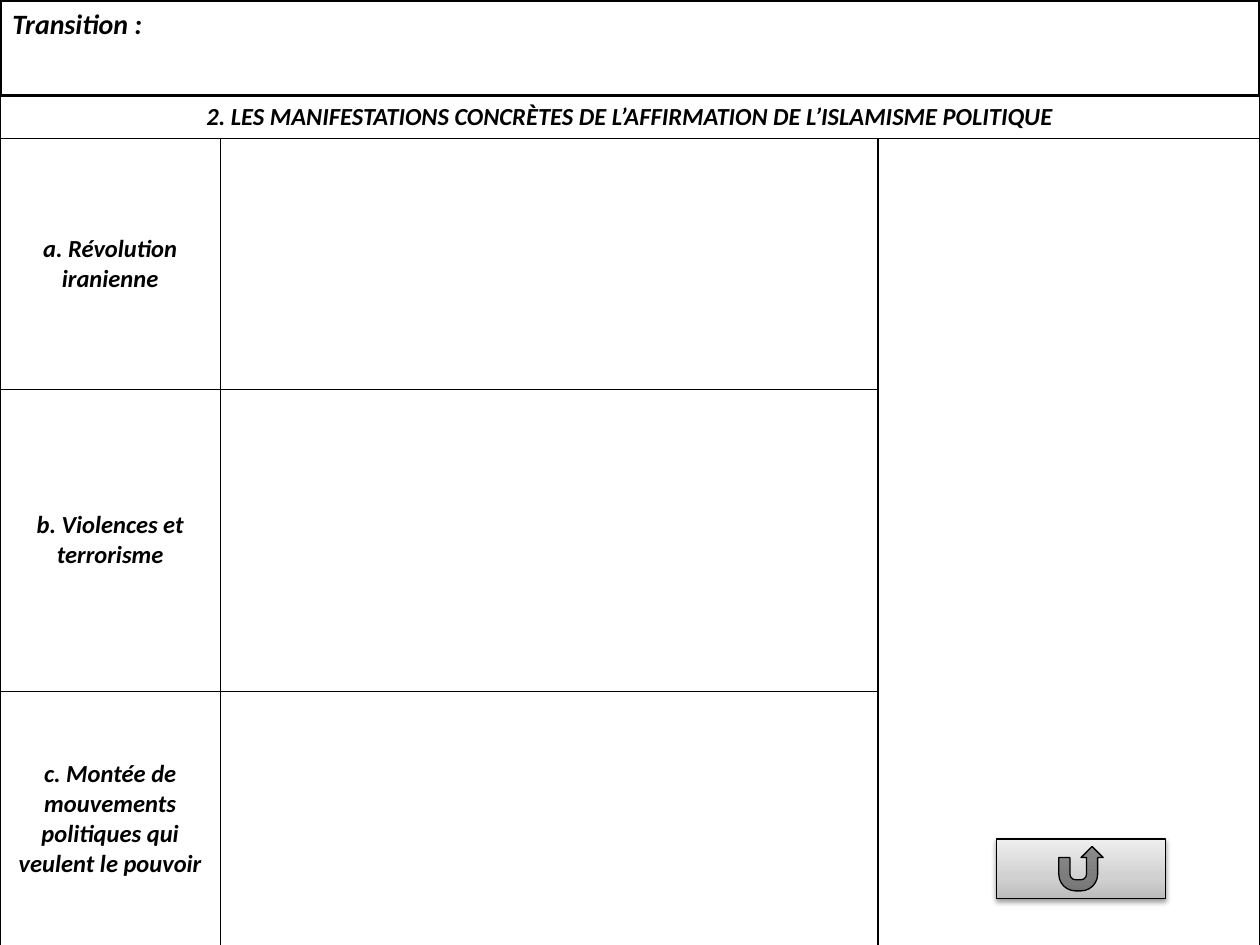
import pptx
import pptx.dml.color
import pptx.enum.shapes
import pptx.enum.text
import pptx.oxml
import pptx.oxml.ns
import pptx.util

Inches = pptx.util.Inches
Pt = pptx.util.Pt
RGBColor = pptx.dml.color.RGBColor
MSO_SHAPE = pptx.enum.shapes.MSO_SHAPE
MSO_ANCHOR = pptx.enum.text.MSO_ANCHOR
PP_ALIGN = pptx.enum.text.PP_ALIGN

BLACK = RGBColor(0x00, 0x00, 0x00)
WHITE = RGBColor(0xFF, 0xFF, 0xFF)
BUTTON_STOPS = {
    0: RGBColor(0xBD, 0xBD, 0xBD),
    35: RGBColor(0xD1, 0xD1, 0xD1),
    100: RGBColor(0xEE, 0xEE, 0xEE),
}
TEXT_FORMAT = {"name": "Calibri", "bold": True, "italic": True}
NAMESPACE = pptx.oxml.ns.nsdecls("a")

COLUMN_WIDTHS = [1.75, 5.22, 3.03]
ROW_HEIGHTS = [0.34, 1.99, 2.4, 2.02]
HEADING = "2. LES MANIFESTATIONS CONCRÈTES DE L’AFFIRMATION DE L’ISLAMISME POLITIQUE"
ROW_LABELS = [
    "a. Révolution iranienne",
    "b. Violences et terrorisme",
    "c. Montée de mouvements politiques qui veulent le pouvoir",
]
BANNER_HEIGHT = 0.76


def write_text(text_frame, text, size, alignment):
    paragraph = text_frame.paragraphs[0]
    paragraph.alignment = alignment
    run = paragraph.add_run()
    run.text = text
    for name, value in TEXT_FORMAT.items():
        setattr(run.font, name, value)
    run.font.size = Pt(size)
    run.font.color.rgb = BLACK


def add_borders(cell):
    properties = cell._tc.get_or_add_tcPr()
    for position, side in enumerate(("lnL", "lnR", "lnT", "lnB")):
        border = pptx.oxml.parse_xml(
            f'<a:{side} {NAMESPACE} w="{Pt(1)}"><a:solidFill>'
            f'<a:srgbClr val="{BLACK}"/></a:solidFill></a:{side}>'
        )
        properties.insert(position, border)


presentation = pptx.Presentation()
presentation.slide_width = Inches(10)
presentation.slide_height = Inches(7.5)
slide = presentation.slides.add_slide(presentation.slide_layouts[6])

# Table grid
table = slide.shapes.add_table(
    len(ROW_HEIGHTS), len(COLUMN_WIDTHS),
    Inches(0), Inches(BANNER_HEIGHT),
    Inches(sum(COLUMN_WIDTHS)), Inches(sum(ROW_HEIGHTS)),
).table
table.first_row = False
table.horz_banding = False
for column, width in zip(table.columns, COLUMN_WIDTHS):
    column.width = Inches(width)
for row, height in zip(table.rows, ROW_HEIGHTS):
    row.height = Inches(height)
    for cell in row.cells:
        cell.fill.background()
        add_borders(cell)
table.cell(0, 0).merge(table.cell(0, 2))
table.cell(1, 2).merge(table.cell(3, 2))

# Heading and row labels
write_text(table.cell(0, 0).text_frame, HEADING, 14, PP_ALIGN.CENTER)
for row_index, label in enumerate(ROW_LABELS, start=1):
    cell = table.cell(row_index, 0)
    cell.vertical_anchor = MSO_ANCHOR.MIDDLE
    write_text(cell.text_frame, label, 14, PP_ALIGN.CENTER)

# Transition banner
banner = slide.shapes.add_shape(
    MSO_SHAPE.RECTANGLE, Inches(0), Inches(0), Inches(10), Inches(BANNER_HEIGHT)
)
banner.shadow.inherit = False
banner.fill.solid()
banner.fill.fore_color.rgb = WHITE
banner.line.color.rgb = BLACK
banner.line.width = Pt(2)

transition = slide.shapes.add_textbox(Inches(0), Inches(0), Inches(1.75), Inches(0.37))
transition.text_frame.word_wrap = True
transition.text_frame.auto_size = pptx.enum.text.MSO_AUTO_SIZE.SHAPE_TO_FIT_TEXT
write_text(transition.text_frame, "Transition :", 16, PP_ALIGN.LEFT)

# Return button with a gradient and a soft shadow
button = slide.shapes.add_shape(
    MSO_SHAPE.ACTION_BUTTON_RETURN, Inches(7.91), Inches(6.66), Inches(1.34), Inches(0.47)
)
button.line.color.rgb = BLACK
button.line.width = Pt(0.75)
stops = "".join(
    f'<a:gs pos="{position * 1000}"><a:srgbClr val="{color}"/></a:gs>'
    for position, color in BUTTON_STOPS.items()
)
gradient = pptx.oxml.parse_xml(
    f'<a:gradFill {NAMESPACE} rotWithShape="1"><a:gsLst>{stops}</a:gsLst>'
    f'<a:lin ang="{270 * 60000}" scaled="0"/></a:gradFill>'
)
shadow = pptx.oxml.parse_xml(
    f'<a:effectLst {NAMESPACE}><a:outerShdw blurRad="{Pt(3.1)}" dist="{Pt(1.6)}" '
    f'dir="{90 * 60000}" rotWithShape="0"><a:srgbClr val="{BLACK}">'
    '<a:alpha val="38000"/></a:srgbClr></a:outerShdw></a:effectLst>'
)
button_line = button.line._get_or_add_ln()
button_line.addprevious(gradient)
button_line.addnext(shadow)

presentation.save("out.pptx")
